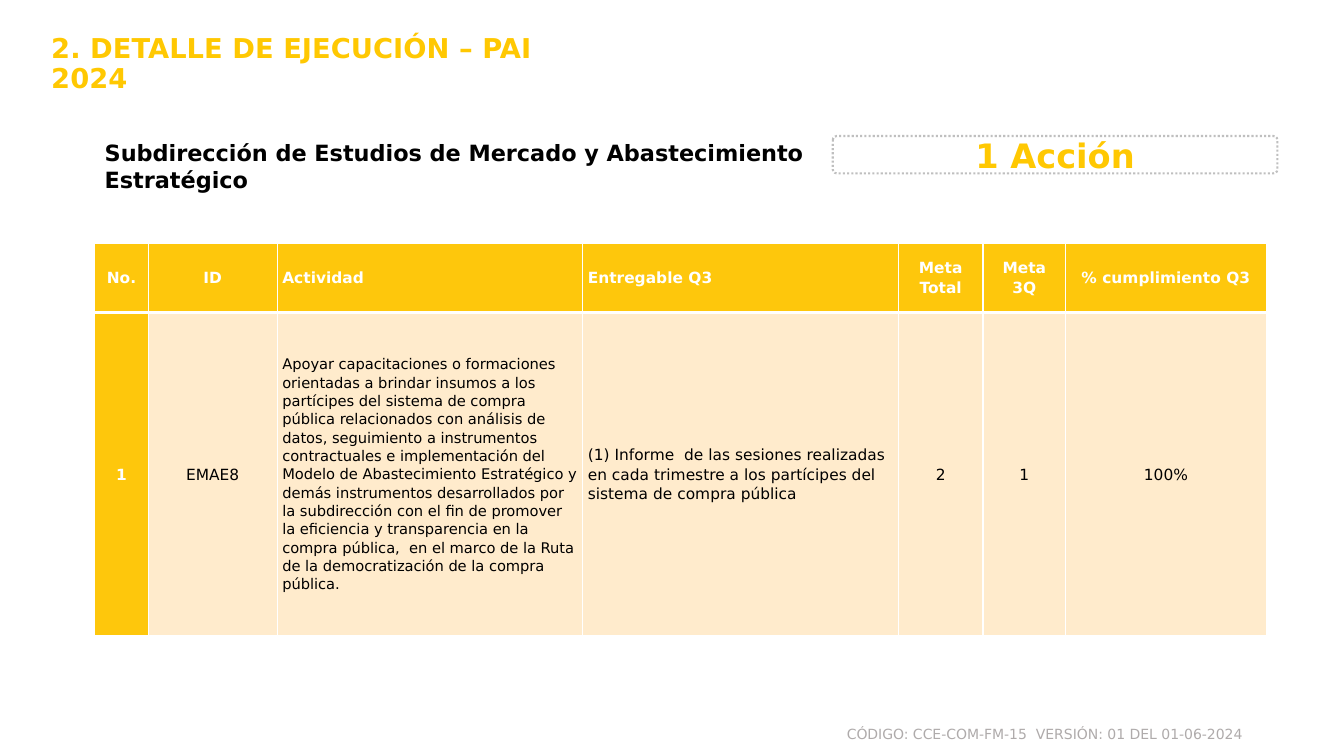
from dataclasses import dataclass

from lxml.etree import SubElement
from pptx import Presentation
from pptx.dml.color import RGBColor
from pptx.enum.dml import MSO_LINE
from pptx.enum.shapes import MSO_SHAPE
from pptx.enum.text import MSO_ANCHOR, PP_ALIGN
from pptx.oxml.ns import qn
from pptx.slide import Slide
from pptx.table import _Cell
from pptx.text.text import TextFrame
from pptx.util import Inches, Pt

FONT = "DejaVu Sans"
YELLOW, HEADER_YELLOW, CREAM = "FFC802", "FEC70C", "FFEBCC"
WHITE, BLACK, GREY, DOT_GREY = "FFFFFF", "000000", "AFABAB", "BFBFBF"


@dataclass
class Style:
    size: float
    color: str = BLACK
    bold: bool = False
    align: PP_ALIGN = PP_ALIGN.LEFT
    line_spacing: float = 1.0
    space_after: float = 0


@dataclass
class Label:
    text: str
    left: float
    top: float
    width: float
    height: float
    style: Style


@dataclass
class Column:
    width: float
    header: str
    value: str
    align: PP_ALIGN = PP_ALIGN.CENTER
    size: float = 11


LABELS = [
    Label("CÓDIGO: CCE-COM-FM-15  VERSIÓN: 01 DEL 01-06-2024", 4.8, 7.15, 7.62, 0.27,
          Style(10, GREY, align=PP_ALIGN.RIGHT)),
    Label("Subdirección de Estudios de Mercado y Abastecimiento Estratégico",
          0.94, 1.33, 8.27, 0.64, Style(16, bold=True)),
    Label("2. DETALLE DE EJECUCIÓN – PAI 2024", 0.41, 0.3, 5.51, 0.78,
          Style(19.5, YELLOW, True, line_spacing=0.9)),
]

ACTIVITY = (
    "Apoyar capacitaciones o formaciones orientadas a brindar insumos a los "
    "partícipes del sistema de compra pública relacionados con análisis de datos, "
    "seguimiento a instrumentos contractuales e implementación del Modelo de "
    "Abastecimiento Estratégico y demás instrumentos desarrollados por la "
    "subdirección con el fin de promover la eficiencia y transparencia en la compra "
    "pública,  en el marco de la Ruta de la democratización de la compra pública."
)
DELIVERABLE = (
    "(1) Informe  de las sesiones realizadas en cada trimestre a los partícipes "
    "del sistema de compra pública"
)
COLUMNS = [
    Column(0.53, "No.", "1"),
    Column(1.28, "ID", "EMAE8"),
    Column(3.03, "Actividad", ACTIVITY, PP_ALIGN.LEFT, 10.5),
    Column(3.13, "Entregable Q3", DELIVERABLE, PP_ALIGN.LEFT),
    Column(0.84, "Meta Total", "2"),
    Column(0.82, "Meta 3Q", "1"),
    Column(1.99, "% cumplimiento Q3", "100%"),
]
ROW_HEIGHTS = [0.69, 3.21]


def rgb(color: str) -> RGBColor:
    return RGBColor.from_string(color)


def write(frame: TextFrame, text: str, style: Style) -> None:
    frame.word_wrap = True
    paragraph = frame.paragraphs[0]
    paragraph.alignment = style.align
    paragraph.line_spacing = style.line_spacing
    paragraph.space_after = Pt(style.space_after)
    run = paragraph.add_run()
    run.text = text
    run.font.name = FONT
    run.font.size = Pt(style.size)
    run.font.bold = style.bold
    run.font.color.rgb = rgb(style.color)


def add_label(slide: Slide, label: Label) -> None:
    shape = slide.shapes.add_textbox(Inches(label.left), Inches(label.top),
                                     Inches(label.width), Inches(label.height))
    write(shape.text_frame, label.text, label.style)


def add_action_badge(slide: Slide) -> None:
    shape = slide.shapes.add_shape(MSO_SHAPE.ROUNDED_RECTANGLE, Inches(8.26),
                                   Inches(1.35), Inches(4.41), Inches(0.37))
    shape.adjustments[0] = 0.105
    shape.shadow.inherit = False
    shape.fill.background()
    shape.line.color.rgb = rgb(DOT_GREY)
    shape.line.width = Pt(1.5)
    shape.line.dash_style = MSO_LINE.ROUND_DOT
    shape.text_frame.vertical_anchor = MSO_ANCHOR.MIDDLE
    write(shape.text_frame, "1 Acción", Style(24, YELLOW, True, PP_ALIGN.CENTER))


def set_borders(cell: _Cell, top: float, bottom: float) -> None:
    properties = cell._tc.get_or_add_tcPr()
    for side, width in {"L": 1, "R": 1, "T": top, "B": bottom}.items():
        line = SubElement(properties, qn(f"a:ln{side}"), w=str(Pt(width)))
        fill = SubElement(line, qn("a:solidFill"))
        SubElement(fill, qn("a:srgbClr"), val=WHITE)


def fill_cell(cell: _Cell, column: Column, is_header: bool, is_accent: bool) -> None:
    set_borders(cell, top=1 if is_header else 3, bottom=3 if is_header else 1)
    cell.fill.solid()
    cell.fill.fore_color.rgb = rgb(HEADER_YELLOW if is_accent else CREAM)
    cell.vertical_anchor = MSO_ANCHOR.MIDDLE
    cell.margin_left = cell.margin_right = Inches(0.05)
    cell.margin_top = cell.margin_bottom = 0
    style = Style(11 if is_header else column.size, WHITE if is_accent else BLACK,
                  is_accent, column.align, 1.07, 8)
    write(cell.text_frame, column.header if is_header else column.value, style)


def add_action_table(slide: Slide) -> None:
    table = slide.shapes.add_table(
        len(ROW_HEIGHTS), len(COLUMNS), Inches(0.94), Inches(2.41),
        Inches(sum(column.width for column in COLUMNS)), Inches(sum(ROW_HEIGHTS)),
    ).table
    for row, height in zip(table.rows, ROW_HEIGHTS):
        row.height = Inches(height)
    for index, column in enumerate(COLUMNS):
        table.columns[index].width = Inches(column.width)
        for row_index in range(len(ROW_HEIGHTS)):
            is_header = row_index == 0
            fill_cell(table.cell(row_index, index), column, is_header,
                      is_header or index == 0)


def main() -> None:
    presentation = Presentation()
    presentation.slide_width = Inches(13.33)
    presentation.slide_height = Inches(7.5)
    slide = presentation.slides.add_slide(presentation.slide_layouts[6])

    # Footer, subtitle and title
    for label in LABELS:
        add_label(slide, label)

    # Action count and detail table
    add_action_badge(slide)
    add_action_table(slide)

    presentation.save("out.pptx")


if __name__ == "__main__":
    main()
